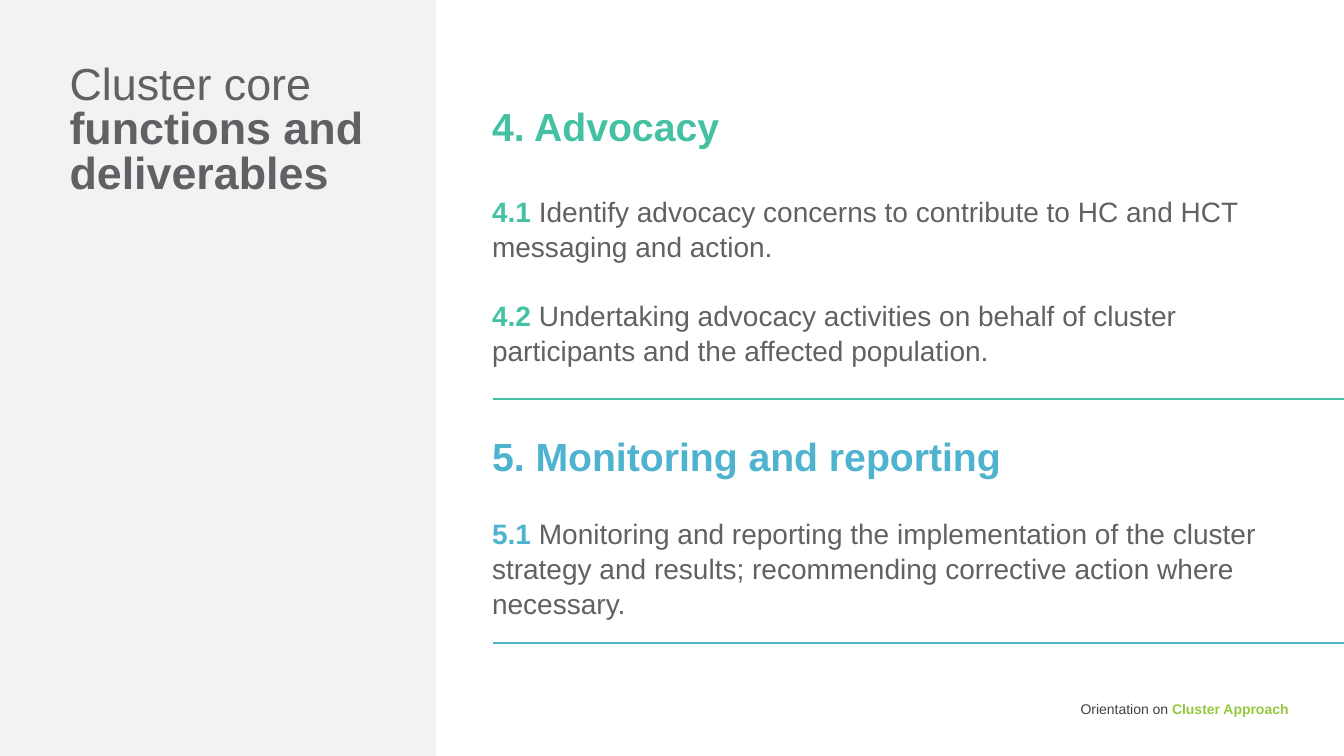
import pptx
import pptx.dml.color
import pptx.enum.shapes
import pptx.enum.text
import pptx.util
from lxml import etree
from pptx.util import Inches

FONT = "Arial"
GREY, DARK, PANEL = "606164", "404143", "F2F2F2"
GREEN, BLUE, LIME = "44C1A3", "4EB3CF", "95C93D"
LEFT, RULE_LEFT, RULE_RIGHT = 4.88, 4.89, 13.33
BODY_WIDTH = 7.72

# Each run is (text, colour, bold); "\v" is a line break.
TITLE = [("Cluster core\v", GREY, False), ("functions and deliverables", GREY, True)]
FOOTER = [("Orientation on ", DARK, False), ("Cluster Approach", LIME, True)]
SECTIONS = [
    {"heading": "4. Advocacy", "colour": GREEN, "heading_box": (1.02, 2.42, 0.53),
     "body_top": 1.87, "body_height": 1.92, "rule_top": 3.96,
     "items": [
         ("4.1 ", "Identify advocacy concerns to contribute to HC and HCT "
                  "messaging and action."),
         ("4.2 ", "Undertaking advocacy activities on behalf of cluster "
                  "participants and the affected population.")]},
    {"heading": "5. Monitoring and reporting", "colour": BLUE,
     "heading_box": (4.29, 5.21, 0.59),
     "body_top": 5.06, "body_height": 1.28, "rule_top": 6.38,
     "items": [
         ("5.1 ", "Monitoring and reporting the implementation of the cluster "
                  "strategy and results; recommending corrective action where "
                  "necessary.")]},
]


def rgb(colour):
    return pptx.dml.color.RGBColor.from_string(colour)


def add_text(slide, box, paragraphs, size, spacing, margins=(0, 0.05, 0.1, 0.05),
             gap=0, wrap=True, align=pptx.enum.text.PP_ALIGN.LEFT,
             anchor=pptx.enum.text.MSO_ANCHOR.TOP):
    """Add a text box; gap is the space in points between paragraphs."""
    frame = slide.shapes.add_textbox(*map(Inches, box)).text_frame
    frame.word_wrap = wrap
    frame.vertical_anchor = anchor
    (frame.margin_left, frame.margin_top,
     frame.margin_right, frame.margin_bottom) = map(Inches, margins)
    for index, runs in enumerate(paragraphs):
        paragraph = frame.add_paragraph() if index else frame.paragraphs[0]
        paragraph.alignment = align
        paragraph.line_spacing = spacing
        paragraph.space_before = pptx.util.Pt(gap if index else 0)
        paragraph.font.name = FONT
        paragraph.font.size = pptx.util.Pt(size)
        for text, colour, bold in runs:
            run = paragraph.add_run()
            run.text = text.rstrip("\v")
            run.font.name = FONT
            run.font.size = pptx.util.Pt(size)
            run.font.bold = bold
            run.font.color.rgb = rgb(colour)
            if text.endswith("\v"):
                paragraph.add_line_break()


def add_rule(slide, top, colour):
    rule = slide.shapes.add_connector(
        pptx.enum.shapes.MSO_CONNECTOR.STRAIGHT,
        Inches(RULE_LEFT), Inches(top), Inches(RULE_RIGHT), Inches(top))
    rule.line.color.rgb = rgb(colour)
    rule.line.width = pptx.util.Pt(1.5)
    etree.SubElement(rule._element.spPr, pptx.oxml.ns.qn("a:effectLst"))


def add_section(slide, section):
    colour = section["colour"]
    top, width, height = section["heading_box"]
    add_text(slide, (LEFT, top, width, height),
             [[(section["heading"], colour, True)]], 28, 0.9, wrap=False)
    items = [[(number, colour, True), (text, GREY, False)]
             for number, text in section["items"]]
    add_text(slide, (LEFT, section["body_top"], BODY_WIDTH, section["body_height"]),
             items, 20, 1.04, gap=24)
    add_rule(slide, section["rule_top"], colour)


def main():
    deck = pptx.Presentation()
    deck.slide_width, deck.slide_height = Inches(13.33), Inches(7.5)
    slide = deck.slides.add_slide(deck.slide_layouts[6])

    panel = slide.shapes.add_shape(pptx.enum.shapes.MSO_SHAPE.RECTANGLE,
                                   0, 0, Inches(4.32), deck.slide_height)
    panel.shadow.inherit = False
    panel.fill.solid()
    panel.fill.fore_color.rgb = rgb(PANEL)
    panel.line.fill.background()

    add_text(slide, (0.69, 0.66, 3.37, 1.29), [TITLE], 32, 0.83,
             anchor=pptx.enum.text.MSO_ANCHOR.MIDDLE)
    for section in SECTIONS:
        add_section(slide, section)
    add_text(slide, (9.91, 6.91, 2.87, 0.26), [FOOTER], 10, 0.8,
             margins=(0.1, 0.1, 0, 0.1), align=pptx.enum.text.PP_ALIGN.RIGHT)

    deck.save("out.pptx")


if __name__ == "__main__":
    main()
